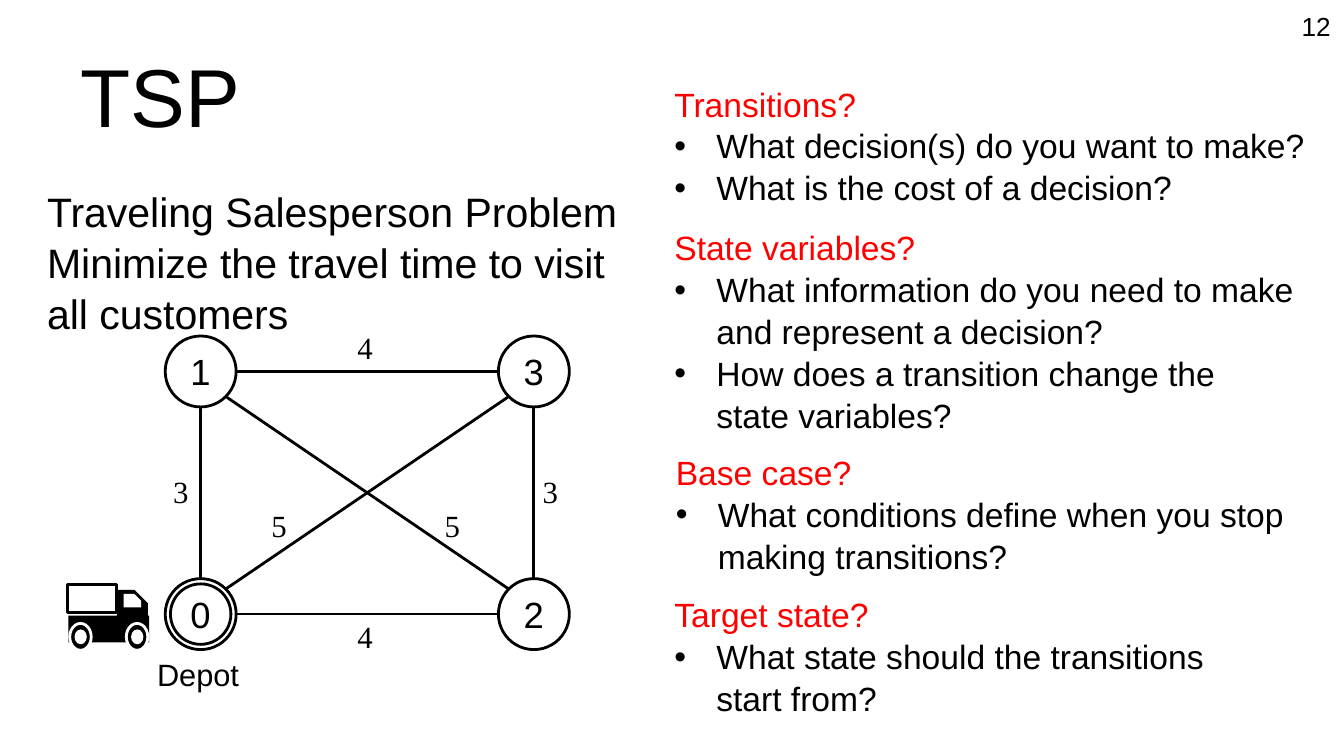
from dataclasses import dataclass
from math import sqrt

from lxml.etree import SubElement
from pptx import Presentation
from pptx.dml.color import RGBColor
from pptx.enum.shapes import MSO_CONNECTOR, MSO_SHAPE
from pptx.enum.text import MSO_ANCHOR, MSO_AUTO_SIZE, PP_ALIGN
from pptx.oxml.ns import qn
from pptx.util import Pt


@dataclass(frozen=True)
class Theme:
    black: RGBColor = RGBColor(0, 0, 0)
    white: RGBColor = RGBColor(255, 255, 255)
    red: RGBColor = RGBColor(255, 0, 0)
    sans: str = "Arial"
    serif: str = "Times New Roman"
    title: float = 44
    body: float = 22
    node: float = 19.5
    question: float = 18
    label: float = 16.5
    number: float = 14
    line: float = 1.5
    spacing: float = 1.04


THEME = Theme()

# Graph: node centres, edges and edge weights
RADIUS = 19
LEFT, RIGHT, TOP, BOTTOM = 107.5, 286, 199, 329
NODES = {"0": (LEFT, BOTTOM), "1": (LEFT, TOP), "2": (RIGHT, BOTTOM), "3": (RIGHT, TOP)}
EDGES = ["03", "01", "02", "23", "31", "21"]
WEIGHTS = [("3", 87.8, 247.7), ("3", 285.8, 247.7), ("4", 186.5, 170.6),
           ("4", 186.5, 325.4), ("5", 233.3, 265.7), ("5", 140.4, 265.7)]

# Questions: left, top, width, height, heading, bullets
QUESTIONS = [
    (354.2, 40.3, 355.7, 72.7, "Transitions?",
     ["What decision(s) do you want to make?", "What is the cost of a decision?"]),
    (354.2, 117.4, 354.2, 116.6, "State variables?",
     ["What information do you need to make \nand represent a decision?",
      "How does a transition change the\nstate variables?"]),
    (355, 237.6, 343.4, 72.7, "Base case?",
     ["What conditions define when you stop\nmaking transitions?"]),
    (354.2, 314, 301, 72.7, "Target state?",
     ["What state should the transitions\nstart from?"]),
]


def write(paragraph, text, size, color=THEME.black, font=THEME.sans, align=PP_ALIGN.LEFT):
    paragraph.alignment = align
    for index, line in enumerate(text.split("\n")):
        if index:
            paragraph.add_line_break()
        run = paragraph.add_run()
        run.text = line
        run.font.size = Pt(size)
        run.font.name = font
        run.font.color.rgb = color


def place(shape, left, top, width, height):
    shape.left, shape.top, shape.width, shape.height = map(Pt, (left, top, width, height))


def set_insets(frame, inset):
    frame.margin_left = frame.margin_right = Pt(inset)
    frame.margin_top = frame.margin_bottom = Pt(inset)


def set_bullet(paragraph, character=None, indent=0):
    properties = paragraph._p.get_or_add_pPr()
    properties.set("marL", str(Pt(indent)))
    properties.set("indent", str(-Pt(indent)))
    if character:
        SubElement(properties, qn("a:buFont"), typeface=THEME.sans)
        SubElement(properties, qn("a:buChar"), char=character)
    else:
        SubElement(properties, qn("a:buNone"))


def add_label(slide, text, box, size, font=THEME.sans):
    frame = slide.shapes.add_textbox(*map(Pt, box)).text_frame
    frame.word_wrap = True
    frame.auto_size = MSO_AUTO_SIZE.SHAPE_TO_FIT_TEXT
    set_insets(frame, 5)
    frame.paragraphs[0].line_spacing = THEME.spacing
    write(frame.paragraphs[0], text, size, font=font)


def add_preset(shapes, preset, box, fill=None, line=None, weight=THEME.line):
    shape = shapes.add_shape(preset, *map(Pt, box))
    shape.shadow.inherit = False
    if fill is None:
        shape.fill.background()
    else:
        shape.fill.solid()
        shape.fill.fore_color.rgb = fill
    if line is None:
        shape.line.fill.background()
    else:
        shape.line.color.rgb = line
        shape.line.width = Pt(weight)
    return shape


def add_circle(slide, center, radius):
    x, y = center
    box = (x - radius, y - radius, 2 * radius, 2 * radius)
    return add_preset(slide.shapes, MSO_SHAPE.OVAL, box, line=THEME.black)


def add_node(slide, name, center):
    frame = add_circle(slide, center, RADIUS).text_frame
    set_insets(frame, 5)
    frame.word_wrap = False
    frame.vertical_anchor = MSO_ANCHOR.MIDDLE
    write(frame.paragraphs[0], name, THEME.node, align=PP_ALIGN.CENTER)


def add_edge(slide, start, end):
    """Join the rims of two nodes; diagonals leave the rim at 45 degrees."""
    signs = [(b > a) - (b < a) for a, b in zip(start, end)]
    reach = RADIUS / sqrt(sum(map(abs, signs)))
    begin = [a + sign * reach for a, sign in zip(start, signs)]
    finish = [b - sign * reach for b, sign in zip(end, signs)]
    edge = slide.shapes.add_connector(MSO_CONNECTOR.STRAIGHT, *map(Pt, begin + finish))
    edge.line.color.rgb = THEME.black
    edge.line.width = Pt(THEME.line)
    SubElement(edge._element.spPr, qn("a:effectLst"))


def add_truck(slide):
    shapes = slide.shapes.add_group_shape().shapes
    black, white = THEME.black, THEME.white
    add_preset(shapes, MSO_SHAPE.RECTANGLE, (36.7, 329.8, 43.2, 14.4), black)
    for left in (37.4, 67.7):
        add_preset(shapes, MSO_SHAPE.OVAL, (left, 334, 11.5, 14.4), black, white)
        add_preset(shapes, MSO_SHAPE.OVAL, (left + 2.9, 337.6, 5.8, 7.2), white, white, 0.75)
    for box, fill in (((62.6, 316, 16.6, 14.4), black), ((66.2, 318.2, 9.4, 7.2), white)):
        add_preset(shapes, MSO_SHAPE.SNIP_1_RECTANGLE, box, fill).adjustments[0] = 0.5
    add_preset(shapes, MSO_SHAPE.RECTANGLE, (36, 313.2, 26.6, 15.1), white, black)


def add_question(slide, left, top, width, height, heading, bullets):
    frame = slide.shapes.add_textbox(*map(Pt, (left, top, width, height))).text_frame
    frame.word_wrap = False
    frame.auto_size = MSO_AUTO_SIZE.SHAPE_TO_FIT_TEXT
    write(frame.paragraphs[0], heading, THEME.question, THEME.red)
    for text in bullets:
        paragraph = frame.add_paragraph()
        set_bullet(paragraph, "•", 22.5)
        write(paragraph, text, THEME.question)
    for paragraph in frame.paragraphs:
        paragraph.line_spacing = THEME.spacing


def add_heading(slide):
    title = slide.shapes.title
    place(title, 36, 16.6, 648, 67.7)
    set_insets(title.text_frame, 7.2)
    title.text_frame.vertical_anchor = MSO_ANCHOR.MIDDLE
    write(title.text_frame.paragraphs[0], "TSP", THEME.title)

    number = slide.shapes.add_textbox(*map(Pt, (671.8, 0, 48.2, 28))).text_frame
    number.word_wrap = True
    number.vertical_anchor = MSO_ANCHOR.MIDDLE
    set_insets(number, 7.2)
    write(number.paragraphs[0], "12", THEME.number, align=PP_ALIGN.RIGHT)


def add_summary(slide):
    body = slide.placeholders[1]
    place(body, 18, 95, 678, 174)
    body.text_frame.auto_size = MSO_AUTO_SIZE.NONE
    paragraph = body.text_frame.paragraphs[0]
    set_bullet(paragraph)
    paragraph.space_before = Pt(0)
    paragraph.line_spacing = THEME.spacing
    write(paragraph, "Traveling Salesperson Problem\nMinimize the travel time to visit \n"
          "all customers", THEME.body)


def main():
    presentation = Presentation()
    presentation.slide_width, presentation.slide_height = Pt(720), Pt(405)
    slide = presentation.slides.add_slide(presentation.slide_layouts[1])

    # Title, page number and problem statement
    add_heading(slide)
    add_summary(slide)

    # Weighted graph with the depot and its truck
    for name, center in NODES.items():
        add_node(slide, name, center)
    for start, end in EDGES:
        add_edge(slide, NODES[start], NODES[end])
    add_circle(slide, NODES["0"], 16.2)
    add_label(slide, "Depot", (79.2, 345.6, 59.8, 31), THEME.label)
    for text, left, top in WEIGHTS:
        add_label(slide, text, (left, top, 19.4, 31), THEME.label, THEME.serif)
    add_truck(slide)

    # Modelling questions
    for question in QUESTIONS:
        add_question(slide, *question)

    presentation.save("out.pptx")


if __name__ == "__main__":
    main()
